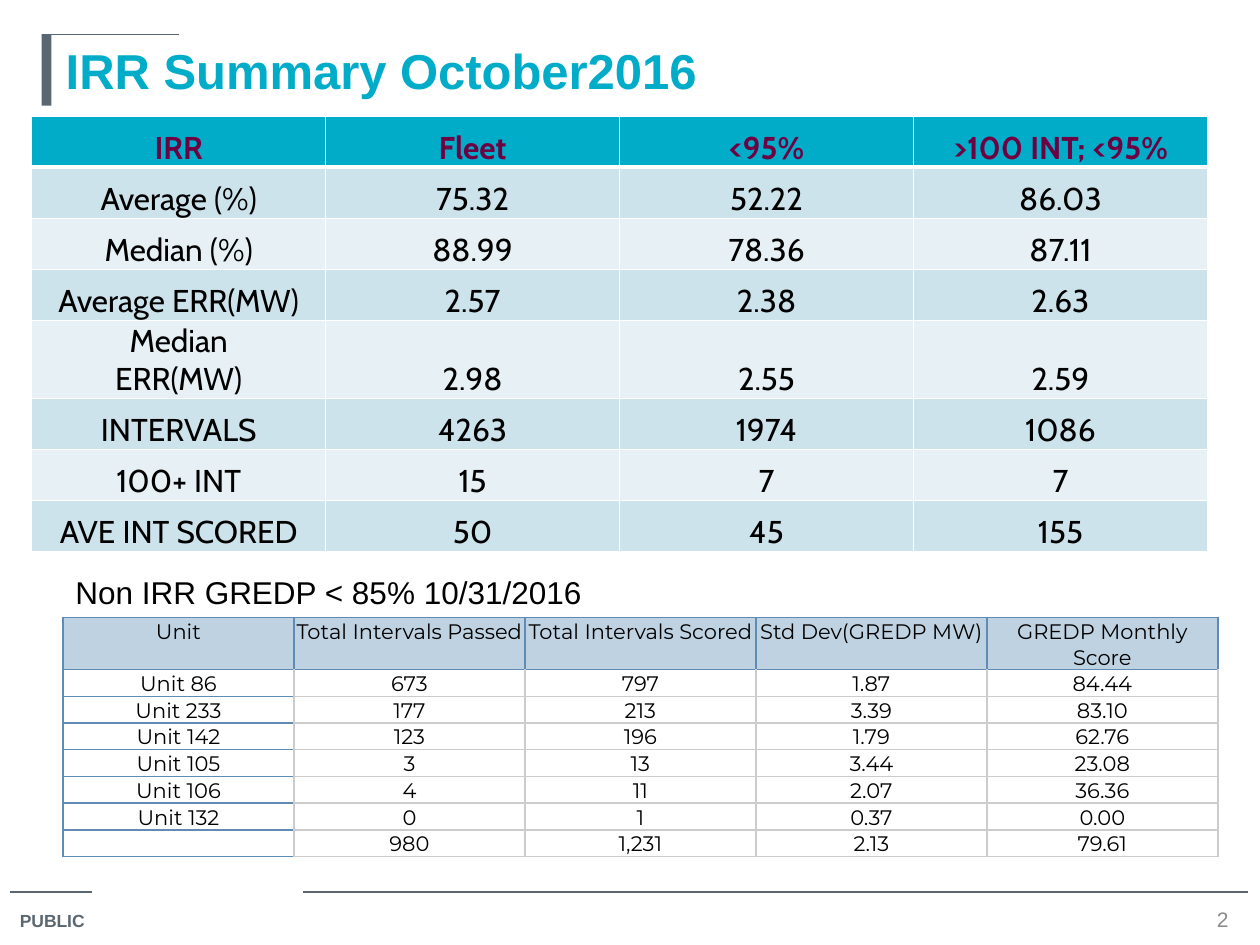
from lxml import etree
from pptx import Presentation
from pptx.dml.color import RGBColor
from pptx.enum.shapes import MSO_CONNECTOR, MSO_SHAPE
from pptx.enum.text import MSO_ANCHOR, PP_ALIGN
from pptx.oxml.ns import qn
from pptx.util import Cm, Pt

LINE, RECT = MSO_CONNECTOR.STRAIGHT, MSO_SHAPE.RECTANGLE
TOP, MIDDLE, BOTTOM = MSO_ANCHOR.TOP, MSO_ANCHOR.MIDDLE, MSO_ANCHOR.BOTTOM
LEFT, CENTER = PP_ALIGN.LEFT, PP_ALIGN.CENTER
COLORS = {
    "slate": "5B6770", "teal": "00ACC8", "maroon": "6D0142", "black": "000000",
    "white": "FFFFFF", "band_dark": "CCE3EB", "band_light": "E7F1F5",
    "head_blue": "BFD2E2", "edge_blue": "608BB4", "edge_gray": "CCCCCC",
    "number": "8C8C8C",
}


def write(tf, text, size, font, color, bold=False, align=LEFT):
    tf.text = text
    for p in tf.paragraphs:
        p.alignment = align
        # An empty cell keeps its row low only with a small end-of-paragraph size
        p._p.get_or_add_endParaRPr().set("sz", str(size * 100))
        for r in p.runs:
            r.font.size, r.font.name, r.font.bold = Pt(size), font, bold
            r.font.color.rgb = RGBColor.from_string(COLORS[color])


def style_cell(cell, fill, anchor, borders):
    cell.margin_left = cell.margin_right = cell.margin_top = Cm(0.03)
    cell.margin_bottom = 0
    cell.vertical_anchor = anchor
    tcPr = cell._tc.get_or_add_tcPr()
    for side, (color, width) in zip("LRTB", borders):
        ln = etree.SubElement(tcPr, qn(f"a:ln{side}"), w=str(Pt(width)))
        solid = etree.SubElement(ln, qn("a:solidFill"))
        etree.SubElement(solid, qn("a:srgbClr"), val=COLORS[color])
    if fill:
        cell.fill.solid()
        cell.fill.fore_color.rgb = RGBColor.from_string(COLORS[fill])
    else:
        cell.fill.background()


prs = Presentation()
prs.slide_width, prs.slide_height = Cm(25.4), Cm(19.05)
s = prs.slides.add_slide(prs.slide_layouts[5])

# Footer rules and title rule
for x1, x2, y in [(0.2, 1.85, 17.98), (6.1, 25.15, 17.98), (0.84, 3.61, 0.69)]:
    line = s.shapes.add_connector(LINE, Cm(x1), Cm(y), Cm(x2), Cm(y))
    line.line.color.rgb = RGBColor.from_string(COLORS["slate"])
    line.line.width = Pt(0.75)
    etree.SubElement(line._element.spPr, qn("a:effectLst"))

# Title bar
bar = s.shapes.add_shape(RECT, Cm(0.84), Cm(0.69), Cm(0.2), Cm(1.44))
bar.shadow.inherit = False
bar.fill.solid()
bar.fill.fore_color.rgb = RGBColor.from_string(COLORS["slate"])
bar.line.fill.background()

# Title
title = s.shapes.title
title.left, title.top, title.width, title.height = Cm(1.07), Cm(0.69), Cm(23.5), Cm(1.98)
title.text_frame.vertical_anchor = TOP
write(title.text_frame, "IRR Summary October2016", 28, "Arial", "teal", True)

# Footer label, page number and second table's heading
for x, y, w, h, text, size, color, bold, align, inset in [
    (0.15, 18.21, 1.96, 0.71, "PUBLIC", 10, "slate", True, LEFT, 0.25),
    (24.33, 18.24, 0.64, 0.58, "2", 12, "number", False, CENTER, 0),
    (1.27, 11.43, 12.27, 1.02, "Non IRR GREDP < 85% 10/31/2016", 18, "black", False, LEFT, 0.25),
]:
    tf = s.shapes.add_textbox(Cm(x), Cm(y), Cm(w), Cm(h)).text_frame
    tf.word_wrap = True
    tf.margin_left = tf.margin_right = Cm(inset)
    tf.vertical_anchor = MIDDLE
    write(tf, text, size, "Arial", color, bold, align)

# IRR summary table
irr_rows = [
    ["IRR", "Fleet", "<95%", ">100 INT; <95%"],
    ["Average (%)", "75.32", "52.22", "86.03"],
    ["Median (%)", "88.99", "78.36", "87.11"],
    ["Average ERR(MW)", "2.57", "2.38", "2.63"],
    ["Median\nERR(MW)", "2.98", "2.55", "2.59"],
    ["INTERVALS", "4263", "1974", "1086"],
    ["100+ INT", "15", "7", "7"],
    ["AVE INT SCORED", "50", "45", "155"],
]
table = s.shapes.add_table(8, 4, Cm(0.64), Cm(2.34), Cm(23.7), Cm(8.76)).table
table.first_row = table.horz_banding = False
for i, row in enumerate(irr_rows):
    table.rows[i].height = Cm(1.57 if "\n" in row[0] else 1.03)
    fill = "teal" if i == 0 else ("band_light", "band_dark")[i % 2]
    borders = [("white", 1), ("white", 1),
               ("white", 3 if i == 1 else 1), ("white", 3 if i == 0 else 1)]
    for j, text in enumerate(row):
        cell = table.cell(i, j)
        style_cell(cell, fill, BOTTOM, borders)
        write(cell.text_frame, text, 18, "Cabin",
              "maroon" if i == 0 else "black", i == 0, CENTER)

# Non-IRR unit table
unit_rows = [
    ["Unit", "Total Intervals Passed", "Total Intervals Scored",
     "Std Dev(GREDP MW)", "GREDP Monthly Score"],
    ["Unit 86", "673", "797", "1.87", "84.44"],
    ["Unit 233", "177", "213", "3.39", "83.10"],
    ["Unit 142", "123", "196", "1.79", "62.76"],
    ["Unit 105", "3", "13", "3.44", "23.08"],
    ["Unit 106", "4", "11", "2.07", "36.36"],
    ["Unit 132", "0", "1", "0.37", "0.00"],
    ["", "980", "1,231", "2.13", "79.61"],
]
table = s.shapes.add_table(8, 5, Cm(1.27), Cm(12.45), Cm(23.28), Cm(4.78)).table
table.first_row = table.horz_banding = False
for i, row in enumerate(unit_rows):
    table.rows[i].height = Cm(1.04 if i == 0 else 0.53)
    for j, text in enumerate(row):
        cell = table.cell(i, j)
        head, first = i == 0, j == 0
        blue_sides = [head or first, head, i <= 1 or first, head or first]
        borders = [("edge_blue" if b else "edge_gray", 1) for b in blue_sides]
        style_cell(cell, "head_blue" if head else None, TOP, borders)
        write(cell.text_frame, text, 12, "Montserrat", "black", False, CENTER)

prs.save("out.pptx")
